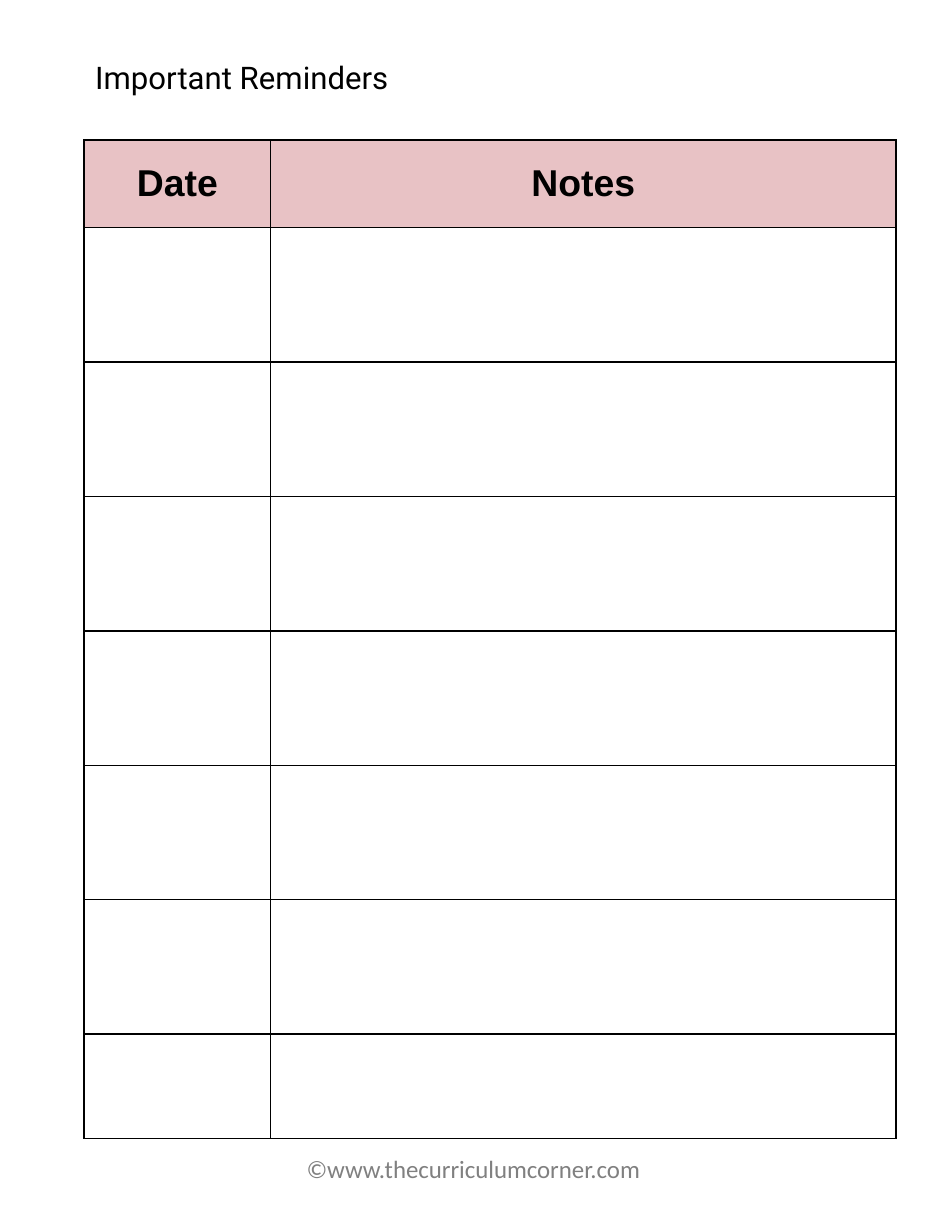
from dataclasses import dataclass

from lxml import etree
from pptx import Presentation
from pptx.dml.color import RGBColor
from pptx.enum import text as t
from pptx.oxml import ns
from pptx.util import Pt


@dataclass(frozen=True)
class Theme:
    """Colours, fonts and type sizes of the planner page."""
    ink: str = "000000"
    paper: str = "FFFFFF"
    blush: str = "E8C2C5"
    grey: str = "808080"
    title: tuple = ("Roboto", 20)
    head: tuple = ("Arial", 24)
    foot: tuple = ("Calibri", 16)
    rule: float = 1


THEME = Theme()


def write(frame, words, style, color, align, bold=False):
    """Add one styled run to the first paragraph of a frame."""
    para = frame.paragraphs[0]
    para.alignment = align
    run = para.add_run()
    run.text = words
    font = run.font
    font.name, font.size = style[0], Pt(style[1])
    font.bold = bold
    font.color.rgb = RGBColor.from_string(color)


def fit(frame):
    """Let a frame hug its single line of text."""
    frame.word_wrap = False
    frame.auto_size = t.MSO_AUTO_SIZE.SHAPE_TO_FIT_TEXT
    frame.vertical_anchor = t.MSO_ANCHOR.TOP


def edge(cell):
    """Draw a thin rule on all four sides of a cell."""
    props = cell._tc.get_or_add_tcPr()
    for side in ("lnL", "lnR", "lnT", "lnB"):
        line = etree.SubElement(props, ns.qn(f"a:{side}"), w=str(Pt(THEME.rule)))
        fill = etree.SubElement(line, ns.qn("a:solidFill"))
        etree.SubElement(fill, ns.qn("a:srgbClr"), val=THEME.ink)


def add_title(slide, box, words):
    """Place the page title in its placeholder."""
    title = slide.shapes.title
    title.left, title.top, title.width, title.height = map(Pt, box)
    fit(title.text_frame)
    write(title.text_frame, words, THEME.title, THEME.ink, t.PP_ALIGN.LEFT)


def add_grid(slide, box, heads, first, top, last, count):
    """Place the reminder table with a header and blank rows."""
    x, y, width, height = box
    body = (height - top - last) / (count - 1)
    rows = [top] + [body] * (count - 1) + [last]
    shape = slide.shapes.add_table(len(rows), len(heads), *map(Pt, box))
    table = shape.table
    table.horz_banding = False
    for col, size in zip(table.columns, (first, width - first)):
        col.width = Pt(size)
    for row, size in zip(table.rows, rows):
        row.height = Pt(size)
    for cell in table.iter_cells():
        edge(cell)
        cell.fill.solid()
        cell.fill.fore_color.rgb = RGBColor.from_string(THEME.paper)
    for col, words in enumerate(heads):
        cell = table.cell(0, col)
        cell.fill.fore_color.rgb = RGBColor.from_string(THEME.blush)
        cell.vertical_anchor = t.MSO_ANCHOR.MIDDLE
        write(cell.text_frame, words, THEME.head, THEME.ink, t.PP_ALIGN.CENTER, True)


def add_foot(slide, box, words):
    """Place the copyright line below the table."""
    frame = slide.shapes.add_textbox(*map(Pt, box)).text_frame
    fit(frame)
    write(frame, words, THEME.foot, THEME.grey, t.PP_ALIGN.LEFT)


def main():
    """Build the reminders page and save it."""
    deck = Presentation()
    deck.slide_width, deck.slide_height = Pt(612), Pt(792)
    slide = deck.slides.add_slide(deck.slide_layouts[5])
    add_foot(slide, (190, 738, 232, 26.6), "©www.thecurriculumcorner.com")
    add_title(slide, (54, 34, 221, 31.5), "Important Reminders")
    add_grid(slide, (54, 90, 522, 642), ("Date", "Notes"),
             first=120, top=56.4, last=67.2, count=7)
    deck.save("out.pptx")


if __name__ == "__main__":
    main()
